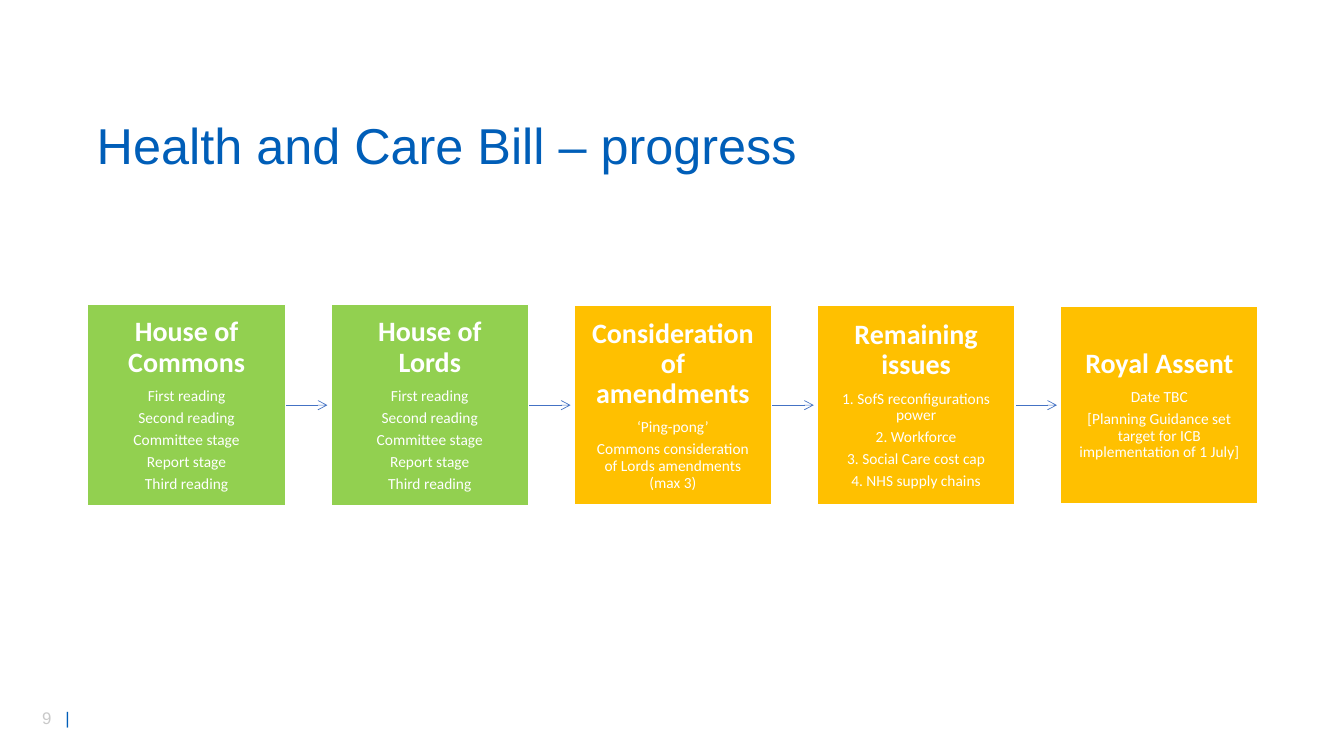
from lxml.etree import SubElement
from pptx import Presentation
from pptx.dml.color import RGBColor
from pptx.enum.shapes import MSO_CONNECTOR, MSO_SHAPE
from pptx.enum.text import MSO_ANCHOR, PP_ALIGN
from pptx.oxml.ns import qn
from pptx.util import Pt

BLUE, GREEN, AMBER = "005EB8", "92D050", "FFC000"
READINGS = ["First reading", "Second reading", "Committee stage", "Report stage", "Third reading"]
STAGES = [
    ("House of Commons", READINGS, GREEN, 144),
    ("House of Lords", READINGS, GREEN, 144),
    ("Consideration of amendments",
     ["‘Ping-pong’", "Commons consideration of Lords amendments (max 3)"], AMBER, 142.6),
    ("Remaining issues",
     ["1. SofS reconfigurations power", "2. Workforce", "3. Social Care cost cap",
      "4. NHS supply chains"], AMBER, 142.6),
    ("Royal Assent",
     ["Date TBC", "[Planning Guidance set target for ICB implementation of 1 July]"], AMBER, 141.1),
]


def colour(value):
    return RGBColor.from_string(value)


def style(span, font, size, value, bold=False):
    span.font.name = font
    span.font.size = Pt(size)
    span.font.bold = bold
    span.font.color.rgb = colour(value)


def add_title(page, left, top, width, height):
    box = page.shapes.add_textbox(Pt(left), Pt(top), Pt(width), Pt(height))
    frame = box.text_frame
    frame.word_wrap = True
    frame.vertical_anchor = MSO_ANCHOR.MIDDLE
    frame.text = "Health and Care Bill – progress"
    para = frame.paragraphs[0]
    para.line_spacing = 0.9
    style(para.runs[0], "Arial", 36, BLUE)


def add_footer(page, left, top, width, height):
    box = page.shapes.add_textbox(Pt(left), Pt(top), Pt(width), Pt(height))
    box.text_frame.word_wrap = True
    para = box.text_frame.paragraphs[0]
    tabs = SubElement(para._p.get_or_add_pPr(), qn("a:tabLst"))
    SubElement(tabs, qn("a:tab"), pos=str(Pt(16.7)), algn="l")
    for text, value in (("9\t", "C9C9C9"), ("|", BLUE)):
        span = para.add_run()
        span.text = text
        style(span, "Arial", 12, value)


def add_stage(page, left, top, width, height, heading, steps, fill):
    box = page.shapes.add_shape(MSO_SHAPE.RECTANGLE, Pt(left), Pt(top), Pt(width), Pt(height))
    box.shadow.inherit = False
    box.fill.solid()
    box.fill.fore_color.rgb = colour(fill)
    box.line.color.rgb = colour("FFFFFF")
    box.line.width = Pt(1)
    frame = box.text_frame
    frame.word_wrap = True
    frame.vertical_anchor = MSO_ANCHOR.MIDDLE
    frame.margin_left = frame.margin_right = Pt(11.2)
    frame.margin_top = frame.margin_bottom = Pt(11.2)
    frame.text = "\n".join([heading, *steps])
    for index, para in enumerate(frame.paragraphs):
        size = 11 if index else 20
        para.alignment = PP_ALIGN.CENTER
        para.line_spacing = 0.9
        para.space_after = Pt(size * 0.35)
        style(para.runs[0], "Calibri", size, "FFFFFF", bold=index == 0)


def add_arrow(page, left, middle, length):
    arrow = page.shapes.add_connector(
        MSO_CONNECTOR.STRAIGHT, Pt(left), Pt(middle), Pt(left + length), Pt(middle))
    arrow.line.color.rgb = colour("4472C4")
    arrow.line.width = Pt(0.5)
    SubElement(arrow.line._get_or_add_ln(), qn("a:tailEnd"), type="arrow")
    SubElement(arrow._element.spPr, qn("a:effectLst"))


def add_process(page, left, middle, width):
    stage_width = 141.2
    pitch = (width - stage_width) / (len(STAGES) - 1)
    for index, (heading, steps, fill, height) in enumerate(STAGES):
        stage_left = left + index * pitch
        if index < len(STAGES) - 1:
            add_arrow(page, stage_left + stage_width, middle, 30)
        add_stage(page, stage_left, middle - height / 2, stage_width, height, heading, steps, fill)


def main():
    deck = Presentation()
    deck.slide_width, deck.slide_height = Pt(960), Pt(540)
    page = deck.slides.add_slide(deck.slide_layouts[6])
    add_footer(page, 23, 501.8, 51, 21.6)
    add_title(page, 62, 82, 838, 48.2)
    add_process(page, 62.7, 289.4, 836)
    deck.save("out.pptx")


if __name__ == "__main__":
    main()
